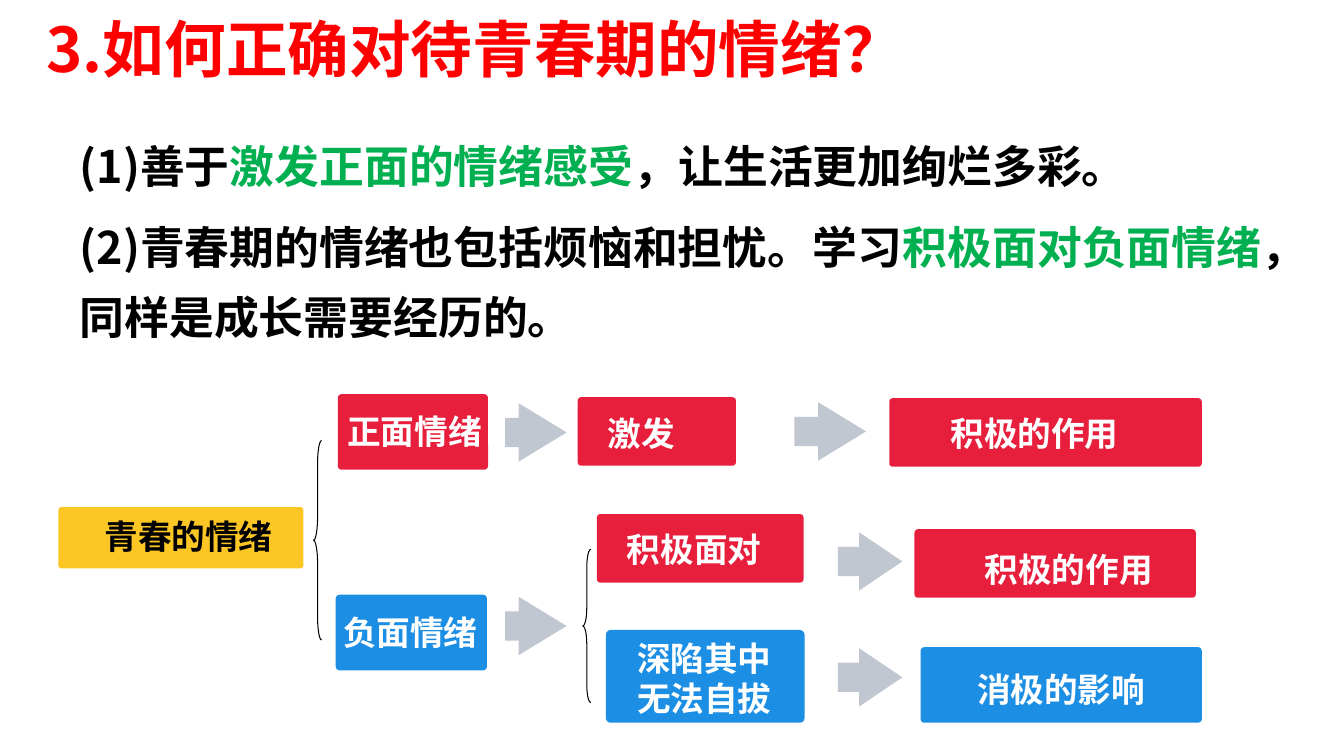
from pptx import Presentation
from pptx.dml.color import RGBColor
from pptx.enum.shapes import MSO_SHAPE as SHAPE
from pptx.enum.text import MSO_ANCHOR as ANCHOR, MSO_AUTO_SIZE as AUTO, PP_ALIGN as ALIGN
from pptx.oxml.ns import qn
from pptx.util import Inches, Pt

BLACK = RGBColor(0x00, 0x00, 0x00)
WHITE = RGBColor(0xFF, 0xFF, 0xFF)
TITLE_RED = RGBColor(0xFF, 0x00, 0x00)
GREEN = RGBColor(0x00, 0xB0, 0x50)
RED = RGBColor(0xE7, 0x1F, 0x3C)
BLUE = RGBColor(0x1C, 0x8E, 0xE4)
YELLOW = RGBColor(0xFC, 0xC7, 0x25)
GREY = RGBColor(0xC1, 0xC7, 0xD0)


class Deck:
    """Holds the text style and the current slide."""

    heading_font = "Noto Sans CJK SC"
    label_font = "Arial"

    def __init__(self, prs):
        self.s = prs.slides.add_slide(prs.slide_layouts[1])

    def place(self, sp, at):
        names = ("left", "top", "width", "height")
        for name, value in zip(names, at):
            setattr(sp, name, Inches(value))

    def run(self, p, text, size, color, font):
        r = p.add_run()
        r.text = text
        for name, value in dict(size=Pt(size), bold=True, name=font).items():
            setattr(r.font, name, value)
        r.font.color.rgb = color
        ea = r.font._element.makeelement(qn("a:ea"), {"typeface": self.heading_font})
        r.font._element.find(qn("a:latin")).addnext(ea)

    def placeholder(self, sp, at, paragraphs, size, wrap):
        """Fill a placeholder with (paragraph format, runs) pairs."""
        self.place(sp, at)
        tf = sp.text_frame
        frame = dict(word_wrap=wrap, auto_size=AUTO.NONE, vertical_anchor=ANCHOR.TOP)
        for name, value in frame.items():
            setattr(tf, name, value)
        for i, (fmt, runs) in enumerate(paragraphs):
            p = tf.add_paragraph() if i else tf.paragraphs[0]
            for name, value in dict(fmt, alignment=ALIGN.LEFT).items():
                setattr(p, name, value)
            pPr = p._p.get_or_add_pPr()
            pPr.set("marL", "0")
            pPr.set("indent", "0")
            pPr.append(pPr.makeelement(qn("a:buNone"), {}))
            for text, color in runs:
                self.run(p, text, size, color, self.heading_font)

    def shape(self, kind, at, adjustments, fill=None):
        """Add a filled shape without outline, or a thin black outline."""
        sp = self.s.shapes.add_shape(kind, *map(Inches, at))
        sp.shadow.inherit = False
        for i, value in enumerate(adjustments):
            sp.adjustments[i] = value
        if fill is None:
            sp.fill.background()
            sp.line.color.rgb = BLACK
            sp.line.width = Pt(0.75)
        else:
            sp.fill.solid()
            sp.fill.fore_color.rgb = fill
            sp.line.fill.background()

    def brace(self, left, top, height, curl):
        self.shape(SHAPE.LEFT_BRACE, (left, top, 0.08, height), (curl, 0.5))

    def arrow(self, left, middle, width, head):
        height = 0.58
        at = (left, middle - height / 2, width, height)
        self.shape(SHAPE.RIGHT_ARROW, at, (0.5, head), GREY)

    def box(self, at, fill, lines, label_at, color=WHITE):
        """Add a rounded box and its label, centred in label_at."""
        self.shape(SHAPE.ROUNDED_RECTANGLE, at, (0.05,), fill)
        tf = self.s.shapes.add_textbox(*map(Inches, label_at)).text_frame
        frame = dict(word_wrap=True, vertical_anchor=ANCHOR.MIDDLE, margin_left=0,
                     margin_right=0, margin_top=0, margin_bottom=0)
        for name, value in frame.items():
            setattr(tf, name, value)
        for i, line in enumerate(lines):
            p = tf.add_paragraph() if i else tf.paragraphs[0]
            p.alignment = ALIGN.CENTER
            self.run(p, line, 24, color, self.label_font)


BOXES = [
    ((3.35, 3.91, 1.49, 0.75), RED, ["正面情绪"], (3.19, 4.08, 1.84, 0.4)),
    ((3.33, 5.9, 1.5, 0.75), BLUE, ["负面情绪"], (3.19, 6.07, 1.76, 0.4)),
    ((5.73, 3.94, 1.57, 0.68), RED, ["激发"], (5.76, 4.1, 1.2, 0.4)),
    ((8.82, 3.95, 3.1, 0.68), RED, ["积极的作用"], (9.07, 4.1, 2.38, 0.4)),
    ((5.92, 5.1, 2.05, 0.68), RED, ["积极面对"], (6.02, 5.25, 1.73, 0.4)),
    ((9.07, 5.25, 2.79, 0.68), RED, ["积极的作用"], (9.53, 5.45, 2.14, 0.4)),
    ((6.01, 6.25, 1.97, 0.92), BLUE, ["深陷其中", "无法自拔"], (5.97, 6.28, 2.03, 0.89)),
    ((9.13, 6.42, 2.79, 0.75), BLUE, ["消极的影响"], (9.51, 6.64, 2.03, 0.4)),
    ((0.58, 5.03, 2.43, 0.61), YELLOW, ["青春的情绪"], (0.86, 5.12, 2.02, 0.4), BLACK),
]
ARROWS = [
    (5.01, 4.29, 0.61, 0.82),
    (7.88, 4.28, 0.71, 0.82),
    (5.01, 6.21, 0.61, 0.82),
    (8.31, 5.57, 0.64, 0.74),
    (8.31, 6.72, 0.64, 0.74),
]
BRACES = [(3.11, 4.37, 1.98, 2.86), (5.78, 5.45, 1.52, 2.19)]

TITLE = [(dict(line_spacing=Pt(49), space_before=Pt(12)),
          [("3.如何正确对待青春期的情绪？", TITLE_RED)])]
POINTS = [
    (dict(line_spacing=Pt(40), space_before=Pt(8)),
     [("(1)善于", BLACK), ("激发正面的情绪感受", GREEN),
      ("，让生活更加绚烂多彩。", BLACK)]),
    (dict(line_spacing=1.3, space_before=Pt(8)),
     [("(2)青春期的情绪也包括烦恼和担忧。学习", BLACK),
      ("积极面对负面情绪", GREEN), ("，同样是成长需要经历的。", BLACK)]),
]


def main():
    prs = Presentation()
    prs.slide_width, prs.slide_height = Inches(13.33), Inches(7.5)
    deck = Deck(prs)
    title, body = deck.s.placeholders
    deck.placeholder(title, (0.36, 0.11, 8.7, 0.79), TITLE, 44, wrap=False)
    deck.placeholder(body, (0.69, 1.3, 11.96, 2.17), POINTS, 32, wrap=True)
    for brace in BRACES:
        deck.brace(*brace)
    for arrow in ARROWS:
        deck.arrow(*arrow)
    for box in BOXES:
        deck.box(*box)
    prs.save("out.pptx")


if __name__ == "__main__":
    main()
